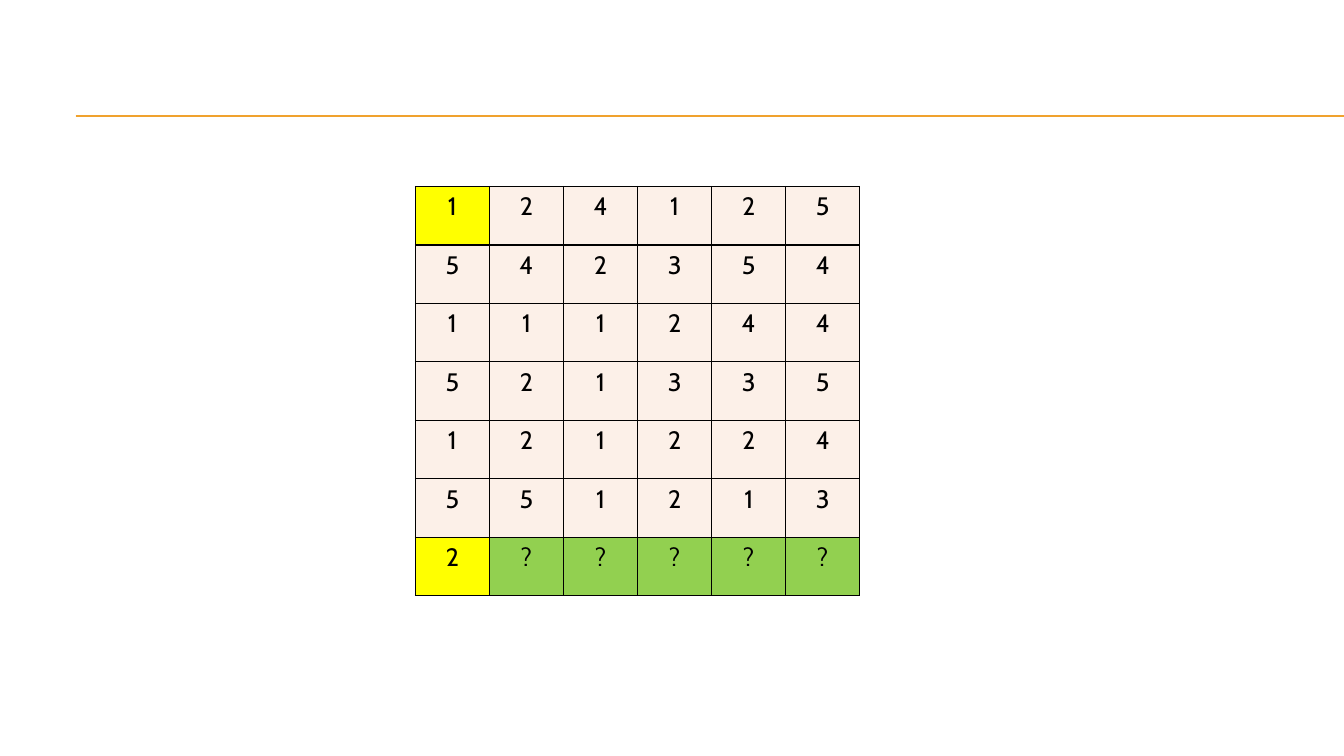
from lxml import etree
from pptx import Presentation
from pptx.dml.color import RGBColor
from pptx.enum.shapes import MSO_CONNECTOR
from pptx.enum.text import PP_ALIGN
from pptx.oxml.ns import qn
from pptx.util import Inches, Pt

STRAIGHT = MSO_CONNECTOR.STRAIGHT
CENTER = PP_ALIGN.CENTER

ORANGE = RGBColor(0xF0, 0xA2, 0x2E)
BLACK = RGBColor(0x00, 0x00, 0x00)
YELLOW = RGBColor(0xFF, 0xFF, 0x00)
CREAM = RGBColor(0xFC, 0xF0, 0xE8)
GREEN = RGBColor(0x92, 0xD0, 0x50)

FONT_FORMAT = {"name": "Cabin", "size": Pt(18), "bold": False}
BORDER_SIDES = ("a:lnL", "a:lnR", "a:lnT", "a:lnB")

# One string per table row, one character per cell
GRID_ROWS = ("124125", "542354", "111244", "521335", "121224", "551213", "2?????")


def add_rule(slide, top):
    """Draw a thin line from the left margin to the slide's right edge."""
    rule = slide.shapes.add_connector(
        STRAIGHT, Inches(0.75), Inches(top), Inches(13.33), Inches(top))
    rule.line.color.rgb = ORANGE
    rule.line.width = Pt(0.75)
    etree.SubElement(rule.element.spPr, qn("a:effectLst"))


def set_borders(cell):
    """Put a black 1 pt line on each side; borders come before the fill."""
    properties = cell._tc.get_or_add_tcPr()
    for position, side in enumerate(BORDER_SIDES):
        border = etree.Element(qn(side), w=str(Pt(1)))
        fill = etree.SubElement(border, qn("a:solidFill"))
        etree.SubElement(fill, qn("a:srgbClr"), val=str(BLACK))
        properties.insert(position, border)


def cell_color(row, column, value):
    """Yellow marks the known pair, green the values still to be found."""
    if value == "?":
        return GREEN
    if column == 0 and row in (0, len(GRID_ROWS) - 1):
        return YELLOW
    return CREAM


def fill_cell(cell, value, color):
    cell.fill.solid()
    cell.fill.fore_color.rgb = color
    set_borders(cell)
    para = cell.text_frame.paragraphs[0]
    para.alignment = CENTER
    span = para.add_run()
    span.text = value
    for name, setting in FONT_FORMAT.items():
        setattr(span.font, name, setting)
    span.font.color.rgb = BLACK


def add_number_grid(slide):
    row_count, column_count = len(GRID_ROWS), len(GRID_ROWS[0])
    frame = slide.shapes.add_table(
        row_count, column_count,
        Inches(4.12), Inches(1.85), Inches(4.41), Inches(4.06))
    table = frame.table
    table.first_row = False
    table.horz_banding = False
    for row, values in enumerate(GRID_ROWS):
        for column, value in enumerate(values):
            fill_cell(table.cell(row, column), value, cell_color(row, column, value))


def main():
    deck = Presentation()
    deck.slide_width = Inches(13.33)
    deck.slide_height = Inches(7.5)
    # The slide has no title, so it takes the blank layout
    slide = deck.slides.add_slide(deck.slide_layouts[6])

    # Double rule across the top
    for top in (1.15, 1.16):
        add_rule(slide, top)

    # Grid of numbers
    add_number_grid(slide)

    deck.save("out.pptx")


if __name__ == "__main__":
    main()
